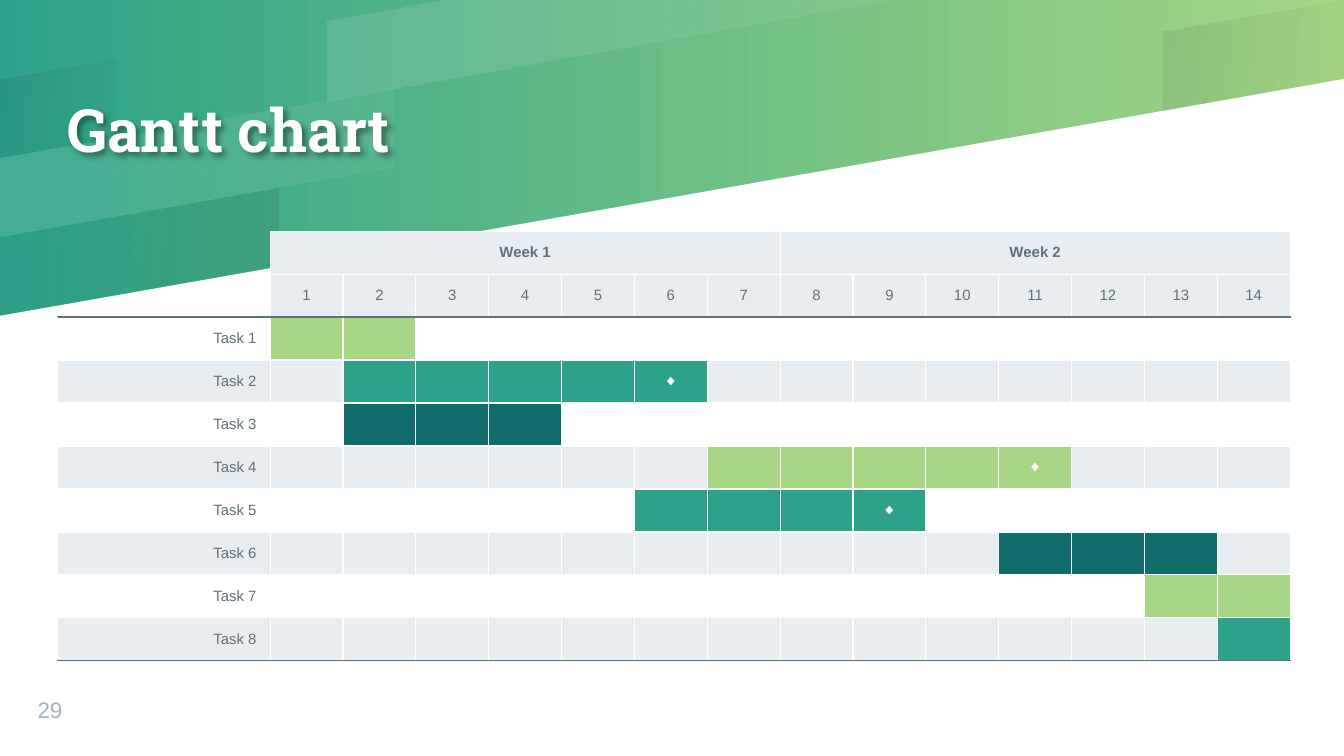
from dataclasses import dataclass
from typing import Optional

import lxml.etree
import pptx
import pptx.dml.color
import pptx.enum.text
import pptx.oxml
import pptx.oxml.ns
import pptx.util

RGBColor = pptx.dml.color.RGBColor
Inches = pptx.util.Inches
Align = pptx.enum.text.PP_ALIGN
Anchor = pptx.enum.text.MSO_ANCHOR
qn = pptx.oxml.ns.qn

TEAL = RGBColor(0x2C, 0xA3, 0x88)
LIME = RGBColor(0xA6, 0xD6, 0x83)
DEEP = RGBColor(0x10, 0x6B, 0x6B)
PALE = RGBColor(0xE8, 0xED, 0xF1)
SLATE = RGBColor(0x60, 0x70, 0x7A)
MIST = RGBColor(0x9E, 0xB3, 0xC2)
WHITE = RGBColor(0xFF, 0xFF, 0xFF)
NIGHT = RGBColor(0x00, 0x00, 0x1A)

SLIDE_W = 10
SLIDE_H = SLIDE_W * 9 / 16
LANE = 2.35 / 4  # height of one slanted lane
RISE = 3  # lanes climbed across the whole slide

TABLE_LEFT, TABLE_TOP, TABLE_RIGHT = 0.43, 1.72, 9.6
LABEL_W, ROW_H = 1.58, 0.32
DAYS, WEEK, HEADER_ROWS = 14, 7, 2
NO_STYLE = "{2D5ABB26-0587-4C30-8999-92F81FD0307C}"


@dataclass(frozen=True)
class Band:
    """A slanted strip one lane high, between two shares of the slide width."""
    lane: int
    start: float
    end: float
    color: RGBColor
    opacity: tuple[int, int]


@dataclass(frozen=True)
class Task:
    first: int
    last: int
    color: RGBColor
    milestone: bool = False


BANDS = [
    Band(1, 0.244, 2 / 3, WHITE, (12, 5)),
    Band(1, 0, 0.087, NIGHT, (8, 2)),
    Band(3, 0, 0.207, NIGHT, (2, 8)),
    Band(3, 0.866, 1, NIGHT, (8, 2)),
    Band(2, 0, 0.293, WHITE, (12, 5)),
]

TASKS = [
    Task(1, 2, LIME),
    Task(2, 6, TEAL, True),
    Task(2, 4, DEEP),
    Task(7, 11, LIME, True),
    Task(6, 9, TEAL, True),
    Task(11, 13, DEEP),
    Task(13, 14, LIME),
    Task(14, 14, TEAL),
]


def lane_y(lane: int, x: float) -> float:
    """Height in inches of a lane's upper edge at a share of the slide width."""
    return max(0, LANE * (lane - RISE * x))


def add_outline(s, points: list[tuple[float, float]]):
    """Closed shape from points given as (share of width, inches down)."""
    corners = [(Inches(x * SLIDE_W), Inches(y)) for x, y in points]
    builder = s.shapes.build_freeform(*corners[0])
    builder.add_line_segments(corners[1:], close=True)
    sp = builder.convert_to_shape()
    sp.shadow.inherit = False
    sp.line.fill.background()
    return sp


def set_gradient(fill, colors: tuple[RGBColor, RGBColor], angle: float) -> None:
    fill.gradient()
    fill.gradient_angle = angle
    for stop, color in zip(fill.gradient_stops, colors):
        stop.color.rgb = color


def add_band(s, band: Band) -> None:
    top_end = min(band.end, band.lane / RISE)
    sp = add_outline(s, [
        (band.start, lane_y(band.lane, band.start)),
        (band.start, lane_y(band.lane + 1, band.start)),
        (band.end, lane_y(band.lane + 1, band.end)),
        (band.end, lane_y(band.lane, band.end)),
        (top_end, lane_y(band.lane, top_end)),
    ])
    set_gradient(sp.fill, (band.color, band.color), 350)
    for color, percent in zip(sp._element.iter(qn("a:srgbClr")), band.opacity):
        lxml.etree.SubElement(color, qn("a:alpha")).set("val", str(percent * 1000))


def format_text(tf, size: float, color: RGBColor, align, bold: bool = False,
                name: str = "Arial") -> None:
    p = tf.paragraphs[0]
    p.alignment = align
    p.font.size, p.font.name, p.font.bold = pptx.util.Pt(size), name, bold
    p.font.color.rgb = color


def clear_margins(tf) -> None:
    tf.margin_left = tf.margin_right = tf.margin_top = tf.margin_bottom = 0
    tf.word_wrap = True


def format_title(s) -> None:
    sp = s.shapes.title
    s.shapes._spTree.append(sp._element)  # in front of the bands
    sp.left, sp.top, sp.width, sp.height = map(Inches, (0.5, 0, 6, 1.98))
    tf = sp.text_frame
    tf.text = "Gantt chart"
    tf.vertical_anchor = Anchor.MIDDLE
    clear_margins(tf)
    format_text(tf, 32, WHITE, Align.LEFT, True, "Roboto Slab")
    tf.paragraphs[0].line_spacing = 0.9
    sp._element.spPr.append(pptx.oxml.parse_xml(
        f'<a:effectLst {pptx.oxml.ns.nsdecls("a")}>'
        '<a:outerShdw blurRad="38100" dist="28575" dir="2700000">'
        '<a:srgbClr val="000000"><a:alpha val="40000"/></a:srgbClr>'
        '</a:outerShdw></a:effectLst>'))


def set_borders(cell, edges: dict[str, RGBColor]) -> None:
    """Edges run from L, R, T, B, the order the file format asks for."""
    tcPr = cell._tc.get_or_add_tcPr()
    for i, (side, color) in enumerate(edges.items()):
        tcPr.insert(i, pptx.oxml.parse_xml(
            f'<a:ln{side} {pptx.oxml.ns.nsdecls("a")} w="9525"><a:solidFill>'
            f'<a:srgbClr val="{color}"/></a:solidFill></a:ln{side}>'))


def cell_edges(row: int, col: int, last_row: int) -> dict[str, RGBColor]:
    top = SLATE if row == HEADER_ROWS else WHITE
    bottom = SLATE if row in (HEADER_ROWS - 1, last_row) else WHITE
    if row < HEADER_ROWS and col == 0:
        return {"R": WHITE, "B": bottom} if row else {"R": WHITE}
    return {"L": WHITE, "R": WHITE, "T": top, "B": bottom}


def fill_cell(cell, text: str, fill: Optional[RGBColor], color: RGBColor = SLATE,
              align=Align.CENTER, bold: bool = False) -> None:
    cell.text = text
    cell.vertical_anchor = Anchor.MIDDLE
    format_text(cell.text_frame, 8, color, align, bold)
    cell.text_frame.paragraphs[0]._p.get_or_add_endParaRPr().set("sz", "800")
    if fill is None:
        cell.fill.background()
    else:
        cell.fill.solid()
        cell.fill.fore_color.rgb = fill


def fill_task_row(table, number: int, task: Task) -> None:
    row = HEADER_ROWS + number - 1
    stripe = PALE if number % 2 == 0 else None
    fill_cell(table.cell(row, 0), f"Task {number}", stripe, align=Align.RIGHT)
    for day in range(1, DAYS + 1):
        active = task.first <= day <= task.last
        mark = "◆" if task.milestone and day == task.last else ""
        fill_cell(table.cell(row, day), mark, task.color if active else stripe, WHITE)


def add_gantt(s) -> None:
    rows = HEADER_ROWS + len(TASKS)
    table = s.shapes.add_table(
        rows, DAYS + 1, Inches(TABLE_LEFT), Inches(TABLE_TOP),
        Inches(TABLE_RIGHT - TABLE_LEFT), Inches(rows * ROW_H)).table
    table.first_row = table.horz_banding = False
    table._tbl.tblPr.find(qn("a:tableStyleId")).text = NO_STYLE
    day_w = (TABLE_RIGHT - TABLE_LEFT - LABEL_W) / DAYS
    for col, column in enumerate(table.columns):
        column.width = Inches(day_w if col else LABEL_W)
    for row in table.rows:
        row.height = Inches(ROW_H)

    for row in range(HEADER_ROWS):
        fill_cell(table.cell(row, 0), "", None)
        for day in range(1, DAYS + 1):
            fill_cell(table.cell(row, day), str(day) if row else "", PALE)
    for week, col in enumerate(range(1, DAYS + 1, WEEK), start=1):
        fill_cell(table.cell(0, col), f"Week {week}", PALE, bold=True)
        table.cell(0, col).merge(table.cell(0, col + WEEK - 1))
    for number, task in enumerate(TASKS, start=1):
        fill_task_row(table, number, task)
    for row in range(rows):
        for col in range(DAYS + 1):
            set_borders(table.cell(row, col), cell_edges(row, col, rows - 1))


def add_page_number(s) -> None:
    tf = s.shapes.add_textbox(*map(Inches, (0.28, 5.11, 0.53, 0.27))).text_frame
    tf.text = "29"
    tf.vertical_anchor = Anchor.BOTTOM
    clear_margins(tf)
    format_text(tf, 12, MIST, Align.LEFT)


def main() -> None:
    prs = pptx.Presentation()
    prs.slide_width, prs.slide_height = Inches(SLIDE_W), Inches(SLIDE_H)
    s = prs.slides.add_slide(prs.slide_layouts[5])
    set_gradient(s.background.fill, (TEAL, LIME), 0)
    ground = add_outline(s, [(0, lane_y(4, 0)), (1, lane_y(4, 1)), (1, SLIDE_H), (0, SLIDE_H)])
    ground.fill.solid()
    ground.fill.fore_color.rgb = WHITE
    for band in BANDS:
        add_band(s, band)
    format_title(s)
    add_gantt(s)
    add_page_number(s)
    prs.save("out.pptx")


if __name__ == "__main__":
    main()
